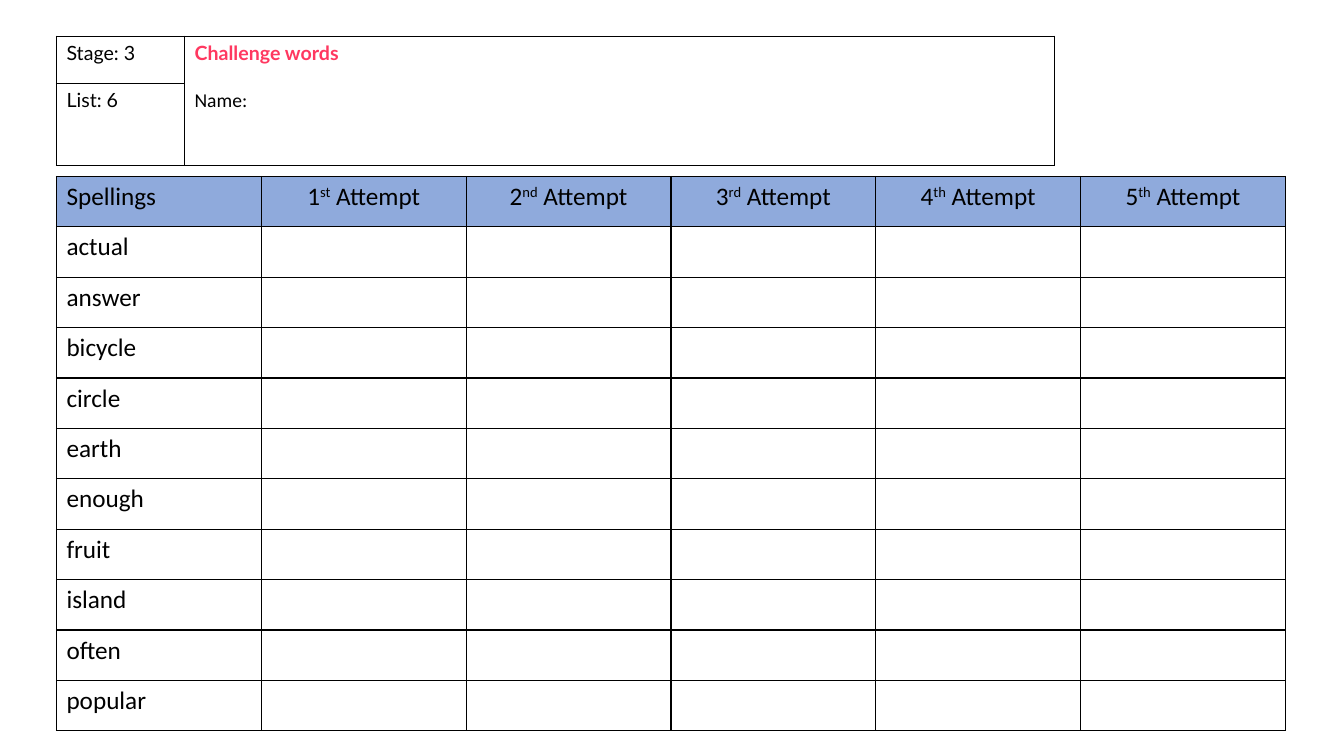
from lxml import etree
from pptx import Presentation
from pptx.dml.color import RGBColor
from pptx.enum.text import PP_ALIGN
from pptx.oxml.ns import qn
from pptx.util import Inches, Pt

BLACK = "000000"
PINK = "FF3860"
HEADER_BLUE = "8FAADC"
WORDS = ["actual", "answer", "bicycle", "circle", "earth",
         "enough", "fruit", "island", "often", "popular"]
ORDINAL_ENDINGS = ["st", "nd", "rd", "th", "th"]


def colour(value):
    return RGBColor.from_string(value)


def add_text(para, text, size=18, font="Calibri", color=BLACK, bold=False, raised=False):
    span = para.add_run()
    span.text = text
    span.font.size = Pt(size)
    span.font.name = font
    span.font.bold = bold
    span.font.color.rgb = colour(color)
    if raised:
        span.font._element.set("baseline", "30000")


def style_cell(cell, fill=None):
    """Give the cell a thin black border on each side, then its fill."""
    properties = cell._tc.get_or_add_tcPr()
    for side in ("lnL", "lnR", "lnT", "lnB"):
        line = etree.SubElement(properties, qn(f"a:{side}"), w=str(Pt(1)))
        solid = etree.SubElement(line, qn("a:solidFill"))
        etree.SubElement(solid, qn("a:srgbClr"), val=BLACK)
    if fill:
        cell.fill.solid()
        cell.fill.fore_color.rgb = colour(fill)
    else:
        cell.fill.background()


def add_grid(page, left, top, widths, heights, header_fill=None):
    """Add a bordered table with the given column widths and row heights."""
    frame = page.shapes.add_table(len(heights), len(widths), Inches(left), Inches(top),
                                  Inches(sum(widths)), Inches(sum(heights)))
    grid = frame.table
    grid.first_row = grid.horz_banding = False
    for column, width in zip(grid.columns, widths):
        column.width = Inches(width)
    for index, (row, height) in enumerate(zip(grid.rows, heights)):
        row.height = Inches(height)
        for cell in row.cells:
            style_cell(cell, header_fill if index == 0 else None)
    return grid


def add_list_heading(page, left, top):
    grid = add_grid(page, left, top, [1.27, 8.63], [0.47, 0.81])
    for row, label in enumerate(["Stage: 3", "List: 6"]):
        add_text(grid.cell(row, 0).text_frame.paragraphs[0], label, size=14, font="Lato")
    heading = grid.cell(0, 1)
    heading.merge(grid.cell(1, 1))
    add_text(heading.text_frame.paragraphs[0], "Challenge words",
             size=14, font="Lato", color=PINK, bold=True)
    name = heading.text_frame.add_paragraph()
    name.space_before = Pt(17)
    add_text(name, "Name:", size=14)


def add_spelling_grid(page, left, top, width, height):
    columns, rows = len(ORDINAL_ENDINGS) + 1, len(WORDS) + 1
    grid = add_grid(page, left, top, [width / columns] * columns,
                    [height / rows] * rows, HEADER_BLUE)
    for row, word in enumerate(["Spellings"] + WORDS):
        add_text(grid.cell(row, 0).text_frame.paragraphs[0], word)
    for number, ending in enumerate(ORDINAL_ENDINGS, start=1):
        para = grid.cell(0, number).text_frame.paragraphs[0]
        para.alignment = PP_ALIGN.CENTER
        add_text(para, str(number))
        add_text(para, ending, raised=True)
        add_text(para, " Attempt")


def main():
    deck = Presentation()
    deck.slide_width, deck.slide_height = Inches(13.33), Inches(7.5)
    page = deck.slides.add_slide(deck.slide_layouts[6])
    add_spelling_grid(page, 0.56, 1.75, 12.19, 5.5)
    add_list_heading(page, 0.56, 0.36)
    deck.save("out.pptx")


if __name__ == "__main__":
    main()
